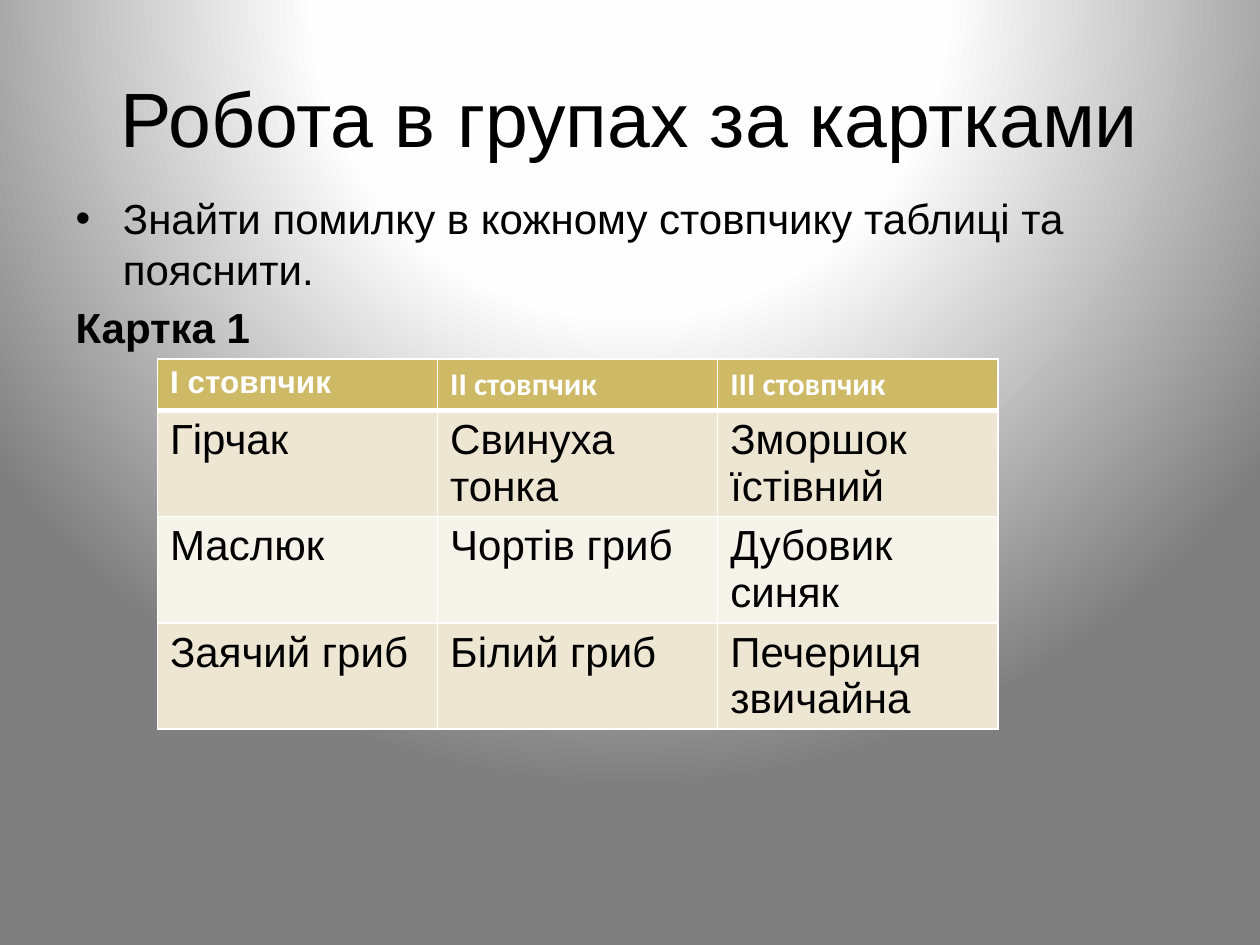
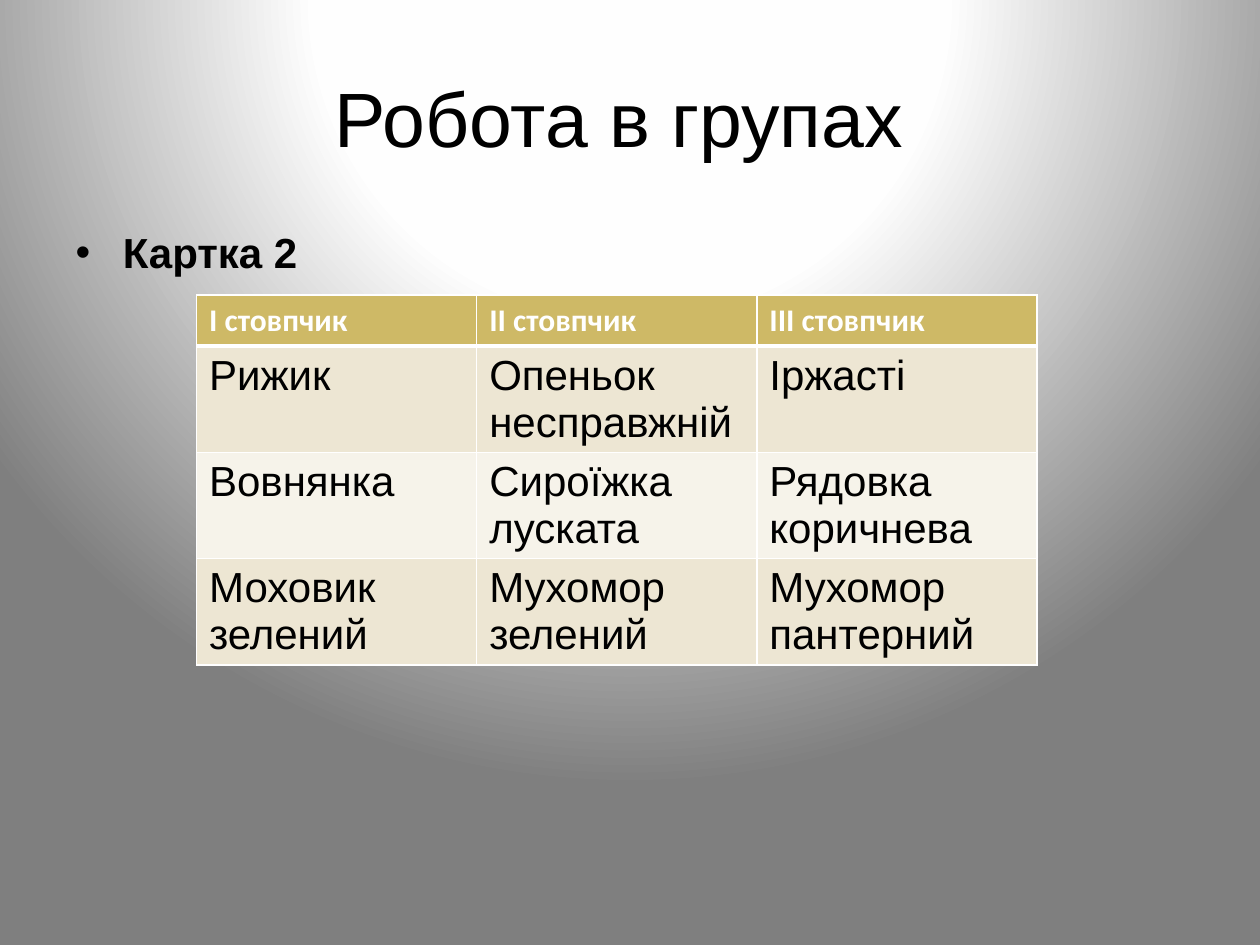
from dataclasses import dataclass

from lxml.etree import SubElement
from pptx import Presentation
from pptx.dml.color import RGBColor
from pptx.enum.text import MSO_ANCHOR, PP_ALIGN
from pptx.oxml import parse_xml
from pptx.oxml.ns import nsdecls, qn
from pptx.util import Inches, Pt


@dataclass(frozen=True)
class Theme:
    font: str = "Arial"
    header_font: str = "Calibri"
    text: str = "000000"
    header_text: str = "FFFFFF"
    header_fill: str = "CEB966"
    row_fills: tuple = ("EDE6D3", "F6F3EA")
    border: str = "FFFFFF"
    border_width: float = 1
    header_rule_width: float = 3
    background: tuple = ((0, "FFFFFF"), (40, "FEFEFE"), (100, "7F7F7F"))
    title_size: int = 44
    body_size: int = 24
    header_size: int = 18


THEME = Theme()
COLUMN_WIDTH = 6.67 / 3
HEADER_HEIGHT = 0.4
ROW_HEIGHT = 0.84
BODY_BOTTOM = 6.7
HEADERS = ("І стовпчик", "ІІ стовпчик", "ІІІ стовпчик")

CARD_1 = (
    ("Гірчак", "Свинуха тонка", "Зморшок їстівний"),
    ("Маслюк", "Чортів гриб", "Дубовик синяк"),
    ("Заячий гриб", "Білий гриб", "Печериця звичайна"),
)
CARD_2 = (
    ("Рижик", "Опеньок несправжній", "Іржасті"),
    ("Вовнянка", "Сироїжка луската", "Рядовка коричнева"),
    ("Моховик зелений", "Мухомор зелений", "Мухомор пантерний"),
)


def set_background(master):
    """Give every slide a circular gradient centred above its top edge."""
    master.background.fill.solid()
    stops = "".join(
        f'<a:gs pos="{position * 1000}"><a:srgbClr val="{color}"/></a:gs>'
        for position, color in THEME.background
    )
    gradient = parse_xml(
        f'<a:gradFill {nsdecls("a")} rotWithShape="1"><a:gsLst>{stops}</a:gsLst>'
        '<a:path path="circle">'
        '<a:fillToRect l="50000" t="-80000" r="50000" b="180000"/>'
        "</a:path></a:gradFill>"
    )
    solid = master.element.find(".//" + qn("p:bgPr")).find(qn("a:solidFill"))
    solid.getparent().replace(solid, gradient)


def format_runs(paragraph, size, color=THEME.text, font=THEME.font, bold=False):
    for run in paragraph.runs:
        run.font.size = Pt(size)
        run.font.name = font
        run.font.bold = bold
        run.font.color.rgb = RGBColor.from_string(color)


def place(shape, left, top, width, height):
    shape.left, shape.top = Inches(left), Inches(top)
    shape.width, shape.height = Inches(width), Inches(height)


def add_titled_slide(presentation, title):
    slide = presentation.slides.add_slide(presentation.slide_layouts[1])
    shape = slide.shapes.title
    place(shape, 0.5, 0.3, 9, 1.25)
    shape.text_frame.text = title
    shape.text_frame.vertical_anchor = MSO_ANCHOR.MIDDLE
    paragraph = shape.text_frame.paragraphs[0]
    paragraph.alignment = PP_ALIGN.CENTER
    format_runs(paragraph, THEME.title_size)
    return slide


def fill_body(slide, top, items):
    """Write (text, bold, bulleted) items into the body placeholder."""
    body = slide.placeholders[1]
    place(body, 0.5, top, 9, BODY_BOTTOM - top)
    text_frame = body.text_frame
    text_frame.text = "\n".join(text for text, _, _ in items)
    for paragraph, (_, bold, bulleted) in zip(text_frame.paragraphs, items):
        format_runs(paragraph, THEME.body_size, bold=bold)
        if not bulleted:
            SubElement(paragraph._p.get_or_add_pPr(), qn("a:buNone"))


def set_borders(cell, top_width, bottom_width):
    properties = cell._tc.get_or_add_tcPr()
    widths = {
        "lnL": THEME.border_width,
        "lnR": THEME.border_width,
        "lnT": top_width,
        "lnB": bottom_width,
    }
    for side, width in widths.items():
        line = SubElement(properties, qn(f"a:{side}"), w=str(Pt(width)))
        fill = SubElement(line, qn("a:solidFill"))
        SubElement(fill, qn("a:srgbClr"), val=THEME.border)


def fill_cell(cell, text, fill, **text_format):
    cell.fill.solid()
    cell.fill.fore_color.rgb = RGBColor.from_string(fill)
    cell.text_frame.text = text
    format_runs(cell.text_frame.paragraphs[0], **text_format)


def add_card_table(slide, left, top, rows, first_header_font=THEME.header_font):
    height = HEADER_HEIGHT + ROW_HEIGHT * len(rows)
    table = slide.shapes.add_table(
        len(rows) + 1, len(HEADERS), Inches(left), Inches(top),
        Inches(COLUMN_WIDTH * len(HEADERS)), Inches(height),
    ).table
    for column in table.columns:
        column.width = Inches(COLUMN_WIDTH)
    for index, row in enumerate(table.rows):
        row.height = Inches(ROW_HEIGHT if index else HEADER_HEIGHT)

    thin, thick = THEME.border_width, THEME.header_rule_width
    for column_index, header in enumerate(HEADERS):
        cell = table.cell(0, column_index)
        set_borders(cell, thin, thick)
        font = THEME.header_font if column_index else first_header_font
        fill_cell(cell, header, THEME.header_fill, size=THEME.header_size,
                  color=THEME.header_text, font=font, bold=True)
    for row_index, names in enumerate(rows):
        fill = THEME.row_fills[row_index % len(THEME.row_fills)]
        for column_index, name in enumerate(names):
            cell = table.cell(row_index + 1, column_index)
            set_borders(cell, thin if row_index else thick, thin)
            fill_cell(cell, name, fill, size=THEME.body_size)


def main():
    presentation = Presentation()
    presentation.slide_width, presentation.slide_height = Inches(10), Inches(7.5)
    set_background(presentation.slide_master)

    slide = add_titled_slide(presentation, "Робота в групах за картками")
    fill_body(slide, 1.48, [
        ("Знайти помилку в кожному стовпчику таблиці та пояснити.", False, True),
        ("Картка 1", True, False),
    ])
    add_card_table(slide, 1.25, 2.85, CARD_1, first_header_font=THEME.font)

    slide = add_titled_slide(presentation, "Робота в групах ")
    fill_body(slide, 1.75, [("Картка 2", True, True)])
    add_card_table(slide, 1.56, 2.34, CARD_2)

    presentation.save("out.pptx")


if __name__ == "__main__":
    main()
